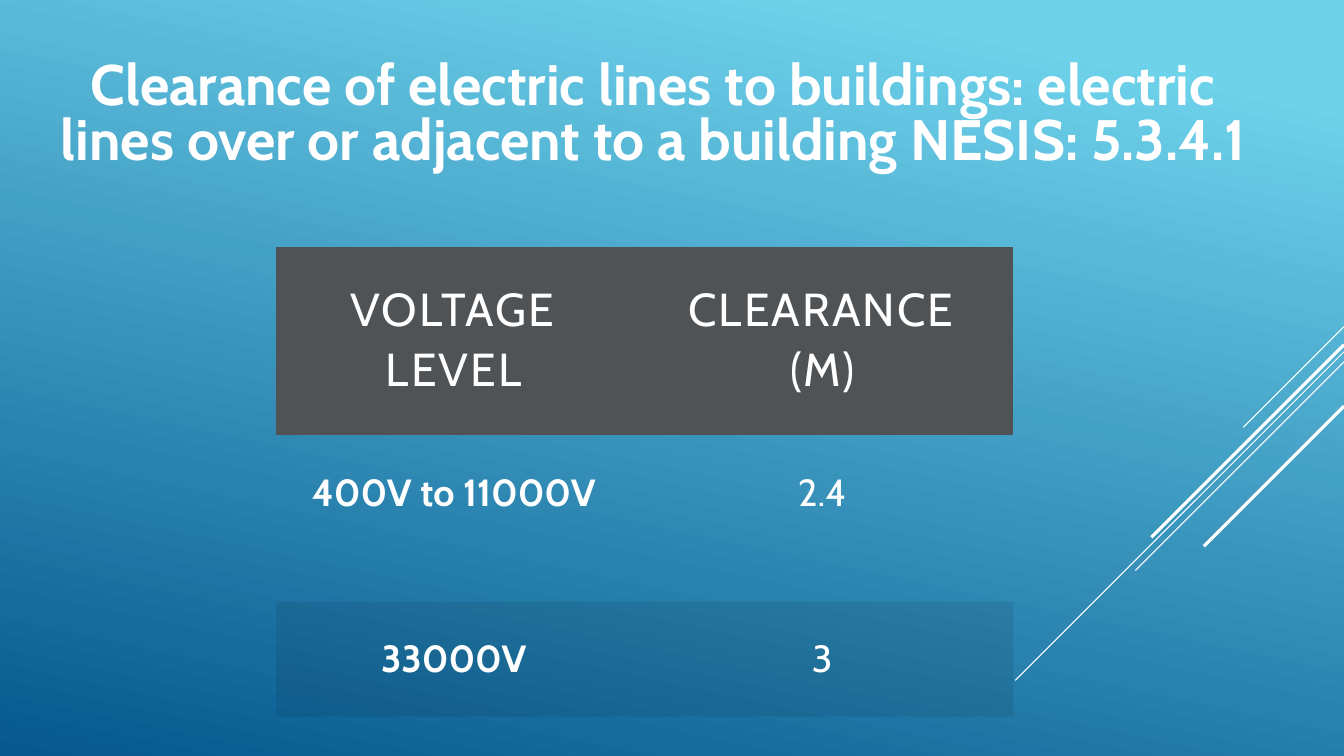
from lxml import etree
from pptx import Presentation
from pptx.dml.color import RGBColor
from pptx.enum.shapes import MSO_CONNECTOR
from pptx.enum.text import MSO_ANCHOR, PP_ALIGN
from pptx.oxml.ns import qn
from pptx.util import Inches, Pt

STRAIGHT = MSO_CONNECTOR.STRAIGHT
CENTER = PP_ALIGN.CENTER
MIDDLE = MSO_ANCHOR.MIDDLE

# Content
TITLE = ("Clearance of electric lines to buildings: electric lines over "
         "or adjacent to a building NESIS: 5.3.4.1")
ROWS = [
    ("VOLTAGE LEVEL", "CLEARANCE (M)"),
    ("400V to 11000V", "2.4"),
    ("33000V", "3"),
]
COL_WIDTHS = (3.52, 3.79)
ROW_HEIGHTS = (1.87, 1.65, 1.14)
CELL_INSET = Inches(0.31)

# Diagonal lines: y at the right edge, horizontal run, weight in points
DIAGONALS = [
    (3.24, 1.00, 0.75),
    (3.49, 3.26, 0.75),
    (3.59, 2.07, 0.75),
    (3.42, 1.91, 2.25),
    (4.03, 1.39, 2.25),
]

# Style
FONT = "Cabin"
NO_GRID_STYLE = "{2D5ABB26-0587-4C30-8999-92F81FD0307C}"
WHITE = RGBColor(0xFF, 0xFF, 0xFF)
BLACK = RGBColor(0x00, 0x00, 0x00)
HEADER_GREY = RGBColor(0x50, 0x53, 0x56)
SKY = RGBColor(0x6E, 0xD2, 0xEB)
DEEP_BLUE = RGBColor(0x06, 0x58, 0x8E)
BAND_ALPHA = 8
SLIDE_W, SLIDE_H = 13.33, 7.5


def write(tf, text, size, bold, spacing):
    p = tf.paragraphs[0]
    p.text = text
    p.alignment = CENTER
    p.line_spacing = spacing
    font = p.runs[0].font
    font.name, font.size, font.bold = FONT, Pt(size), bold
    font.color.rgb = WHITE
    return p.runs[0]


def fill_cell(cell, row):
    if row == 1:
        cell.fill.background()
        return
    cell.fill.solid()
    cell.fill.fore_color.rgb = BLACK if row else HEADER_GREY
    if row:
        color = cell._tc.tcPr.find(".//" + qn("a:srgbClr"))
        etree.SubElement(color, qn("a:alpha"), val=str(BAND_ALPHA * 1000))


prs = Presentation()
prs.slide_width, prs.slide_height = Inches(SLIDE_W), Inches(SLIDE_H)
s = prs.slides.add_slide(prs.slide_layouts[6])

# Background gradient
bg = s.background.fill
bg.gradient()
bg.gradient_angle = 360 - 102
for stop, (position, color) in zip(bg.gradient_stops, [(0.1, SKY), (1, DEEP_BLUE)]):
    stop.position = position
    stop.color.rgb = color

# Diagonal lines, all at 45 degrees from the right edge
for y, run, weight in DIAGONALS:
    line = s.shapes.add_connector(STRAIGHT, Inches(SLIDE_W), Inches(y),
                                  Inches(SLIDE_W - run), Inches(y + run))
    line.line.color.rgb = WHITE
    line.line.width = Pt(weight)
    etree.SubElement(line._element.spPr, qn("a:effectLst"))

# Title
tf = s.shapes.add_textbox(Inches(0.28), Inches(0.49), Inches(12.39), Inches(1.96)).text_frame
tf.word_wrap = True
tf.vertical_anchor = MIDDLE
tf.margin_bottom = Inches(0.68)
write(tf, TITLE, 40.7, True, 0.8)

# Clearance table
frame = s.shapes.add_table(len(ROWS), len(COL_WIDTHS), Inches(2.74), Inches(2.45),
                           Inches(sum(COL_WIDTHS)), Inches(sum(ROW_HEIGHTS)))
table = frame.table
table._tbl.tblPr.find(qn("a:tableStyleId")).text = NO_GRID_STYLE
table.first_row = table.horz_banding = False
for column, width in zip(table.columns, COL_WIDTHS):
    column.width = Inches(width)
for i, (values, height) in enumerate(zip(ROWS, ROW_HEIGHTS)):
    table.rows[i].height = Inches(height)
    for j, value in enumerate(values):
        cell = table.cell(i, j)
        cell.margin_left = cell.margin_right = CELL_INSET
        cell.margin_top = cell.margin_bottom = CELL_INSET
        fill_cell(cell, i)
        header = i == 0
        r = write(cell.text_frame, value, 33 if header else 27,
                  not header and j == 0, 1.07)
        if header:
            r.font._element.set("spc", "150")

prs.save("out.pptx")
